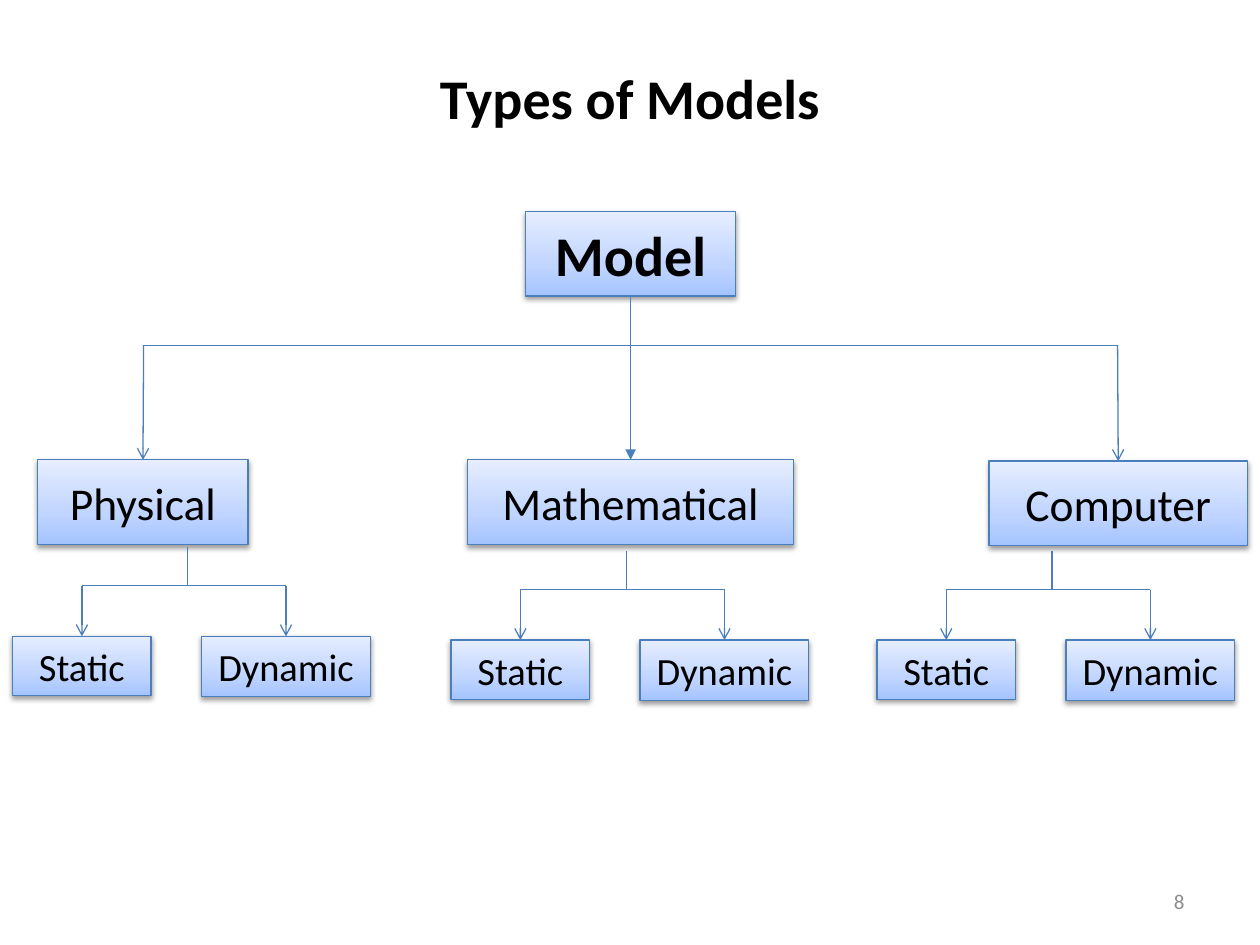
from copy import deepcopy

from lxml.etree import SubElement
from pptx import Presentation
from pptx.dml.color import RGBColor
from pptx.enum.shapes import MSO_CONNECTOR, MSO_SHAPE
from pptx.enum.text import MSO_ANCHOR, PP_ALIGN
from pptx.oxml.ns import qn
from pptx.util import Inches, Pt

BLACK = RGBColor(0x00, 0x00, 0x00)
GRAY = RGBColor(0x8C, 0x8C, 0x8C)
BLUE = RGBColor(0x4B, 0x7E, 0xBC)
SHADES = [(0, RGBColor(0xA4, 0xC4, 0xFF)),
          (0.35, RGBColor(0xBF, 0xD4, 0xFF)),
          (1, RGBColor(0xE6, 0xEE, 0xFF))]
FONT = "Calibri"
TOP, BOTTOM = 0, 2


def write(frame, text, size=22, bold=False, color=BLACK, align=PP_ALIGN.CENTER):
    frame.word_wrap = True
    frame.vertical_anchor = MSO_ANCHOR.MIDDLE
    para = frame.paragraphs[0]
    para.alignment = align
    run = para.add_run()
    run.text = text
    font = run.font
    font.name, font.size, font.bold = FONT, Pt(size), bold
    font.color.rgb = color


class Chart:
    """Holds the slide and the look of the tree."""

    def __init__(self, slide):
        self.slide = slide
        self.shapes = slide.shapes

    def title(self, text, x, y, w, h):
        head = self.shapes.title
        head.left, head.top, head.width, head.height = map(Inches, (x, y, w, h))
        write(head.text_frame, text, size=32, bold=True)

    def label(self, text, x, y, w, h, **style):
        area = self.shapes.add_textbox(*map(Inches, (x, y, w, h)))
        write(area.text_frame, text, **style)

    def box(self, text, x, y, w, h, **style):
        box = self.shapes.add_shape(MSO_SHAPE.RECTANGLE, *map(Inches, (x, y, w, h)))
        box.line.color.rgb = BLUE
        box.line.width = Pt(0.75)
        self.shade(box)
        self.shadow(box)
        write(box.text_frame, text, **style)
        return box

    def shade(self, box):
        fill = box.fill
        fill.gradient()
        fill.gradient_angle = 90
        stops = box._element.spPr.find(qn("a:gradFill")).find(qn("a:gsLst"))
        stops.append(deepcopy(stops[0]))
        for stop, (spot, color) in zip(fill.gradient_stops, SHADES):
            stop.position = spot
            stop.color.rgb = color

    def shadow(self, box):
        box.shadow.inherit = False
        effects = box._element.spPr.find(qn("a:effectLst"))
        outer = SubElement(effects, qn("a:outerShdw"), blurRad=str(Pt(3.1)),
                           dist=str(Pt(1.6)), dir="5400000", rotWithShape="0")
        tint = SubElement(outer, qn("a:srgbClr"), val=str(BLACK))
        SubElement(tint, qn("a:alpha"), val="38000")

    def line(self, x1, y1, x2, y2, tip=None, start=None, end=None):
        line = self.shapes.add_connector(
            MSO_CONNECTOR.STRAIGHT, *map(Inches, (x1, y1, x2, y2)))
        line.line.color.rgb = BLUE
        line.line.width = Pt(0.75)
        if start is not None:
            line.begin_connect(start, BOTTOM)
        if end is not None:
            line.end_connect(end, TOP)
        if tip:
            SubElement(line.line._get_or_add_ln(), qn("a:tailEnd"), type=tip)
        SubElement(line._element.spPr, qn("a:effectLst"))

    def branch(self, x, y):
        """Two leaves under a fork; x, y is the corner of the left leaf."""
        bar = y - 0.4
        static = self.box("Static", x, y, 1.1, 0.47)
        dynamic = self.box("Dynamic", x + 1.5, y, 1.34, 0.48)
        left, right = x + 0.55, x + 2.17
        self.line(x + 1.39, y - 0.71, x + 1.39, bar)
        self.line(right, bar, left, bar)
        for spot, leaf in ((left, static), (right, dynamic)):
            self.line(spot, bar, spot, y, tip="arrow", end=leaf)


def main():
    deck = Presentation()
    deck.slide_width, deck.slide_height = Inches(10), Inches(7.5)
    chart = Chart(deck.slides.add_slide(deck.slide_layouts[5]))
    chart.title("Types of Models", 0.5, 0.42, 9, 0.7)

    # Root and the three kinds
    root = chart.box("Model", 4.17, 1.68, 1.67, 0.67, size=32, bold=True)
    left = chart.box("Physical", 0.3, 3.65, 1.67, 0.67, size=26)
    mid = chart.box("Mathematical", 3.71, 3.65, 2.59, 0.67, size=26)
    right = chart.box("Computer", 7.85, 3.66, 2.05, 0.67, size=26)

    # Page number
    chart.label("8", 7.17, 6.95, 2.33, 0.4, size=12, color=GRAY,
                align=PP_ALIGN.RIGHT)

    # Fork from the root
    chart.line(5, 2.35, 5, 3.65, tip="triangle", start=root, end=mid)
    chart.line(8.87, 2.74, 1.14, 2.74)
    chart.line(1.14, 2.74, 1.14, 3.65, tip="arrow", end=left)
    chart.line(8.87, 2.74, 8.87, 3.66, tip="arrow", end=right)

    # Static and dynamic leaves
    for x, y in ((0.1, 5.05), (6.96, 5.08), (3.58, 5.08)):
        chart.branch(x, y)

    deck.save("out.pptx")


if __name__ == "__main__":
    main()
